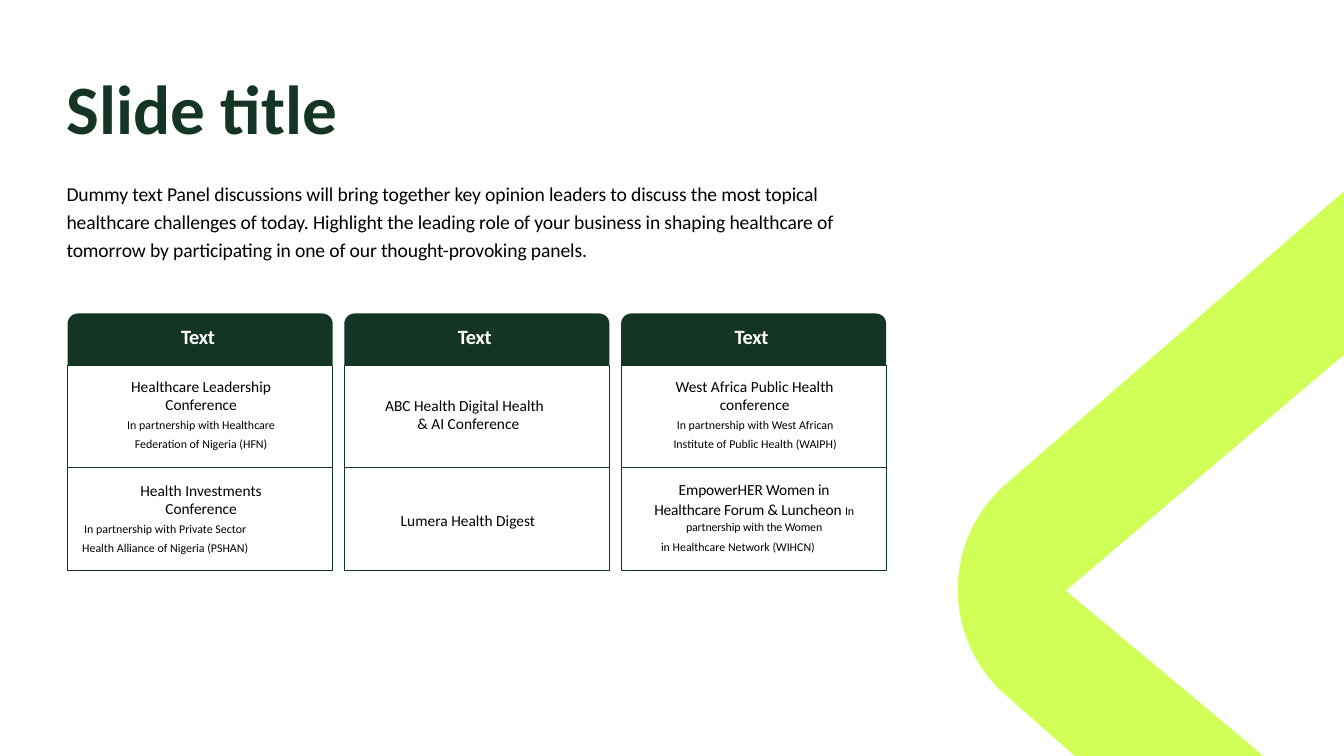
import math
from pptx import Presentation
from pptx.dml.color import RGBColor
from pptx.enum.shapes import MSO_SHAPE
from pptx.enum.text import MSO_ANCHOR, PP_ALIGN
from pptx.util import Inches, Pt

RECT = MSO_SHAPE.RECTANGLE
ROUND_TOP = MSO_SHAPE.ROUND_2_SAME_RECTANGLE
TOP = MSO_ANCHOR.TOP
LEFT, CENTER = PP_ALIGN.LEFT, PP_ALIGN.CENTER

COLORS = {"green": "143523", "lime": "D0FF57", "black": "000000", "white": "FFFFFF"}
FONT = "Calibri"
NAME, NOTE = 11, 8.5

TITLE = "Slide title"
INTRO = (
    "Dummy text Panel discussions will bring together key opinion leaders to discuss "
    "the most topical healthcare challenges of today. Highlight the leading role of your "
    "business in shaping healthcare of tomorrow by participating in one of our "
    "thought-provoking panels."
)
HEADERS = ["Text", "Text", "Text"]

UPPER = [
    {"box": (1.23, 3.73, 1.52, 0.76), "paras": [
        {"runs": [("Healthcare Leadership Conference", NAME)], "align": CENTER,
         "margins": (0.07, 0.06)},
        {"runs": [("In partnership with Healthcare Federation of Nigeria (HFN)", NOTE)],
         "align": CENTER, "spacing": 1.27, "before": 0.2},
    ]},
    {"box": (3.81, 3.92, 1.72, 0.4), "paras": [
        {"runs": [("ABC Health Digital Health & AI Conference", NAME)],
         "margins": (0.33, 0.1), "indent": -0.32},
    ]},
    {"box": (6.64, 3.73, 1.69, 0.76), "paras": [
        {"runs": [("West Africa Public Health conference", NAME)], "align": CENTER,
         "margins": (0.03, 0.03)},
        {"runs": [("In partnership with West African Institute of Public Health (WAIPH)", NOTE)],
         "align": CENTER, "spacing": 1.27, "before": 0.2},
    ]},
]

LOWER = [
    {"inset": 0.13, "paras": [
        {"runs": [("Health Investments Conference", NAME)], "align": CENTER,
         "margins": (0.72, 0.7)},
        {"runs": [("In partnership with Private Sector", NOTE)], "align": CENTER,
         "margins": (0.01, 0.7), "before": 3},
        {"runs": [("Health Alliance of Nigeria (PSHAN)", NOTE)], "align": CENTER,
         "margins": (0.01, 0.7), "before": 2.8},
    ]},
    {"inset": 0.43, "paras": [
        {"runs": [("Lumera Health Digest", NAME)], "margins": (0.56, 0)},
    ]},
    {"inset": 0.1, "paras": [
        {"runs": [("EmpowerHER Women in Healthcare Forum & Luncheon ", NAME),
                  ("In partnership with the Women", NOTE)],
         "align": CENTER, "margins": (0.3, 0.29), "spacing": 1.1, "track": -0.1},
        {"runs": [("in Healthcare Network (WIHCN)", NOTE)], "align": CENTER,
         "margins": (0, 0.31), "before": 3.6},
    ]},
]

COL_LEFT, COL_PITCH, COL_W = 0.67, 2.745, 2.63
HEAD_TOP, HEAD_H = 3.11, 0.51
ROW_TOPS, ROW_H = (3.62, 4.64), 1.02

ARC_X, ARC_Y, ARC_R, ARC_ANGLE, ARC_STEPS = 10.89, 5.85, 1.39, 49.7, 40
ARM_TOP = [(13.33, 1.9)]
ARM_BOTTOM = [(10.66, 7.5), (12.53, 7.5), (12.33, 7.33), (10.57, 5.86), (13.33, 3.52)]


def rgb(name):
    return RGBColor.from_string(COLORS[name])


def write(sp, paras, inset=0.01, right=0, color="black", bold=False):
    tf = sp.text_frame
    tf.word_wrap = True
    tf.vertical_anchor = TOP
    tf.margin_left = tf.margin_bottom = 0
    tf.margin_top, tf.margin_right = Inches(inset), Inches(right)
    for i, para in enumerate(paras):
        p = tf.add_paragraph() if i else tf.paragraphs[0]
        p.alignment = para.get("align", LEFT)
        p.line_spacing = para.get("spacing", 1.0)
        p.space_before = Pt(para.get("before", 0))
        mar_left, mar_right = para.get("margins", (0.01, 0))
        pPr = p._p.get_or_add_pPr()
        pPr.set("marL", str(Inches(mar_left)))
        pPr.set("marR", str(Inches(mar_right)))
        pPr.set("indent", str(Inches(para.get("indent", 0))))
        for text, size in para["runs"]:
            r = p.add_run()
            r.text = text
            r.font.name, r.font.size, r.font.bold = FONT, Pt(size), bold
            r.font.color.rgb = rgb(color)
            r._r.get_or_add_rPr().set("spc", str(round(para.get("track", 0) * 100)))


def add_text(s, box, paras, **style):
    write(s.shapes.add_textbox(*map(Inches, box)), paras, **style)


def add_box(s, kind, left, top, height, filled=False):
    sp = s.shapes.add_shape(kind, *map(Inches, (left, top, COL_W, height)))
    sp.shadow.inherit = False
    if filled:
        sp.fill.solid()
        sp.fill.fore_color.rgb = rgb("green")
        sp.line.fill.background()
    else:
        sp.fill.background()
        sp.line.color.rgb = rgb("green")
        sp.line.width = Pt(0.55)
    return sp


def add_chevron(s):
    angles = [math.radians(ARC_ANGLE * (1 - 2 * i / ARC_STEPS)) for i in range(ARC_STEPS + 1)]
    arc = [(ARC_X - ARC_R * math.cos(a), ARC_Y - ARC_R * math.sin(a)) for a in angles]
    points = [(Inches(x), Inches(y)) for x, y in ARM_TOP + arc + ARM_BOTTOM]
    builder = s.shapes.build_freeform(*points[0])
    builder.add_line_segments(points[1:], close=True)
    sp = builder.convert_to_shape()
    sp.shadow.inherit = False
    sp.fill.solid()
    sp.fill.fore_color.rgb = rgb("lime")
    sp.line.fill.background()


def main():
    prs = Presentation()
    prs.slide_width, prs.slide_height = Inches(13.33), Inches(7.5)
    s = prs.slides.add_slide(prs.slide_layouts[6])

    add_text(s, (0.65, 1.75, 7.71, 0.86),
             [{"runs": [(INTRO, 14)], "spacing": 1.19, "track": -0.1}])
    add_text(s, (0.65, 0.64, 7.71, 0.87), [{"runs": [(TITLE, 49.5)]}],
             color="green", bold=True)
    add_chevron(s)

    for i, (header, upper, lower) in enumerate(zip(HEADERS, UPPER, LOWER)):
        left = COL_LEFT + i * COL_PITCH
        head = add_box(s, ROUND_TOP, left, HEAD_TOP, HEAD_H, filled=True)
        head.adjustments[0] = 0.2
        write(head, [{"runs": [(header, 14.5)], "align": CENTER, "track": -0.2}],
              inset=0.08, right=0.05, color="white", bold=True)
        cells = [add_box(s, RECT, left, top, ROW_H) for top in ROW_TOPS]
        add_text(s, upper["box"], upper["paras"])
        write(cells[1], lower["paras"], inset=lower["inset"])

    prs.save("out.pptx")


if __name__ == "__main__":
    main()
